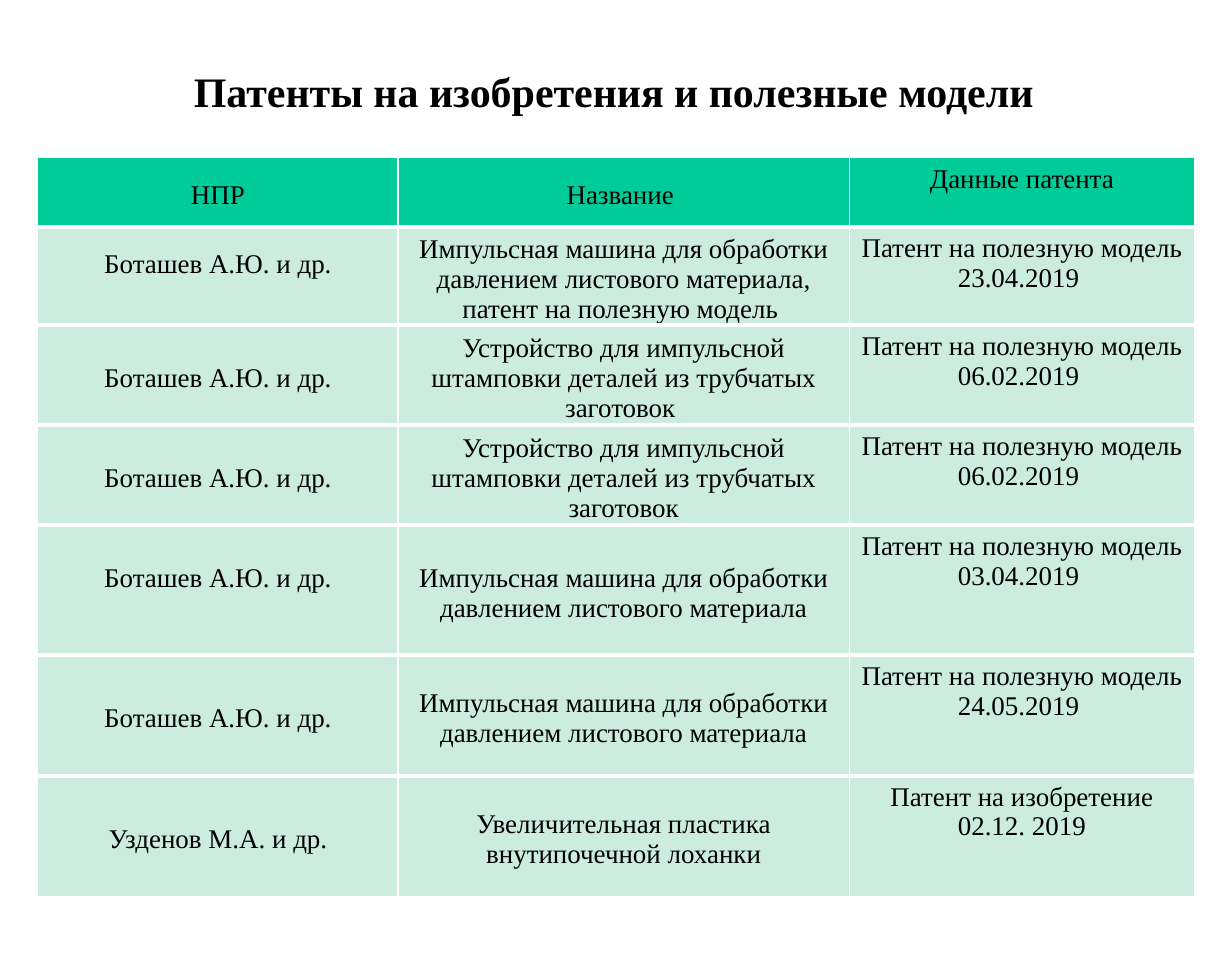
from lxml.etree import SubElement
from pptx import Presentation
from pptx.dml.color import RGBColor
from pptx.enum.text import MSO_ANCHOR, MSO_AUTO_SIZE, PP_ALIGN
from pptx.oxml.ns import qn
from pptx.util import Cm, Pt

TITLE = "Патенты на изобретения и полезные модели"
HEAD = ("НПР", "Название ", "Данные патента")
LEAD = "Боташев А.Ю. и др."
MODEL = "Патент на полезную модель"
PRESS = "Импульсная машина для обработки давлением листового материала"
STAMP = "Устройство для импульсной штамповки деталей из трубчатых заготовок"
ROWS = [
    HEAD,
    (LEAD, PRESS + ", патент на полезную модель ", MODEL + "\n23.04.2019 "),
    (LEAD, STAMP + " ", MODEL + "\n06.02.2019 "),
    (LEAD, STAMP, MODEL + "\n06.02.2019 "),
    (LEAD, PRESS, MODEL + "\n03.04.2019 "),
    (LEAD, PRESS, MODEL + "\n24.05.2019 "),
    ("Узденов М.А. и др.", "Увеличительная пластика внутипочечной лоханки",
     "Патент на изобретение\n02.12. 2019"),
]
WIDTHS = (8.48, 10.62, 8.13)
HEIGHTS = (1.63, 2.31, 2.36, 2.36, 3.05, 2.84, 2.84)
RAISED = {(1, 0): 0.7, (4, 0): 0.7}

THEME = {
    "font": "Times New Roman", "ink": RGBColor(0, 0, 0),
    "head": RGBColor(0x00, 0xCC, 0x99), "body": RGBColor(0xCB, 0xEC, 0xDE),
    "rule": "FFFFFF", "title": Pt(28), "text": Pt(18),
    "thin": Pt(1), "thick": Pt(3),
}


def apply(item, **format):
    for key, value in format.items():
        setattr(item, key, value)


def style(par, size, bold):
    par.alignment = PP_ALIGN.CENTER
    for run in par.runs:
        apply(run.font, name=THEME["font"], size=size, bold=bold)
        run.font.color.rgb = THEME["ink"]


def edge(cell, sides):
    props = cell._tc.get_or_add_tcPr()
    for side, width in sides.items():
        line = SubElement(props, qn("a:ln" + side), w=str(width))
        fill = SubElement(line, qn("a:solidFill"))
        SubElement(fill, qn("a:srgbClr"), val=THEME["rule"])


def add_title(slide):
    title = slide.shapes.title
    apply(title, left=Cm(2.06), top=Cm(0.89), width=Cm(24.77), height=Cm(2.49))
    frame = title.text_frame
    frame.text = TITLE
    apply(frame, margin_left=0, margin_top=0, margin_right=0, margin_bottom=0,
          vertical_anchor=MSO_ANCHOR.MIDDLE, word_wrap=True,
          auto_size=MSO_AUTO_SIZE.NONE)
    par = frame.paragraphs[0]
    par.line_spacing = 1.01
    style(par, THEME["title"], True)


def add_grid(slide):
    grid = slide.shapes.add_table(
        len(ROWS), len(HEAD), Cm(0.89), Cm(3.71),
        Cm(sum(WIDTHS)), Cm(sum(HEIGHTS))).table
    grid.horz_banding = False
    for col, width in zip(grid.columns, WIDTHS):
        col.width = Cm(width)
    for row, height in zip(grid.rows, HEIGHTS):
        row.height = Cm(height)
    last = len(ROWS) - 1
    thin, thick = THEME["thin"], THEME["thick"]
    for r, texts in enumerate(ROWS):
        sides = {"L": thin, "R": thin,
                 "T": thick if r else thin,
                 "B": thick if r < last else thin}
        for c, text in enumerate(texts):
            cell = grid.cell(r, c)
            cell.text = text
            apply(cell, margin_left=0, margin_right=0, margin_top=Cm(0.15),
                  margin_bottom=Cm(RAISED.get((r, c), 0)),
                  vertical_anchor=MSO_ANCHOR.MIDDLE if c < 2 else MSO_ANCHOR.TOP)
            edge(cell, sides)
            cell.fill.solid()
            cell.fill.fore_color.rgb = THEME["body" if r else "head"]
            for par in cell.text_frame.paragraphs:
                style(par, THEME["text"], False)


def main():
    deck = Presentation()
    apply(deck, slide_width=Cm(29), slide_height=Cm(22.6))
    slide = deck.slides.add_slide(deck.slide_layouts[5])
    add_title(slide)
    add_grid(slide)
    deck.save("out.pptx")


if __name__ == "__main__":
    main()
